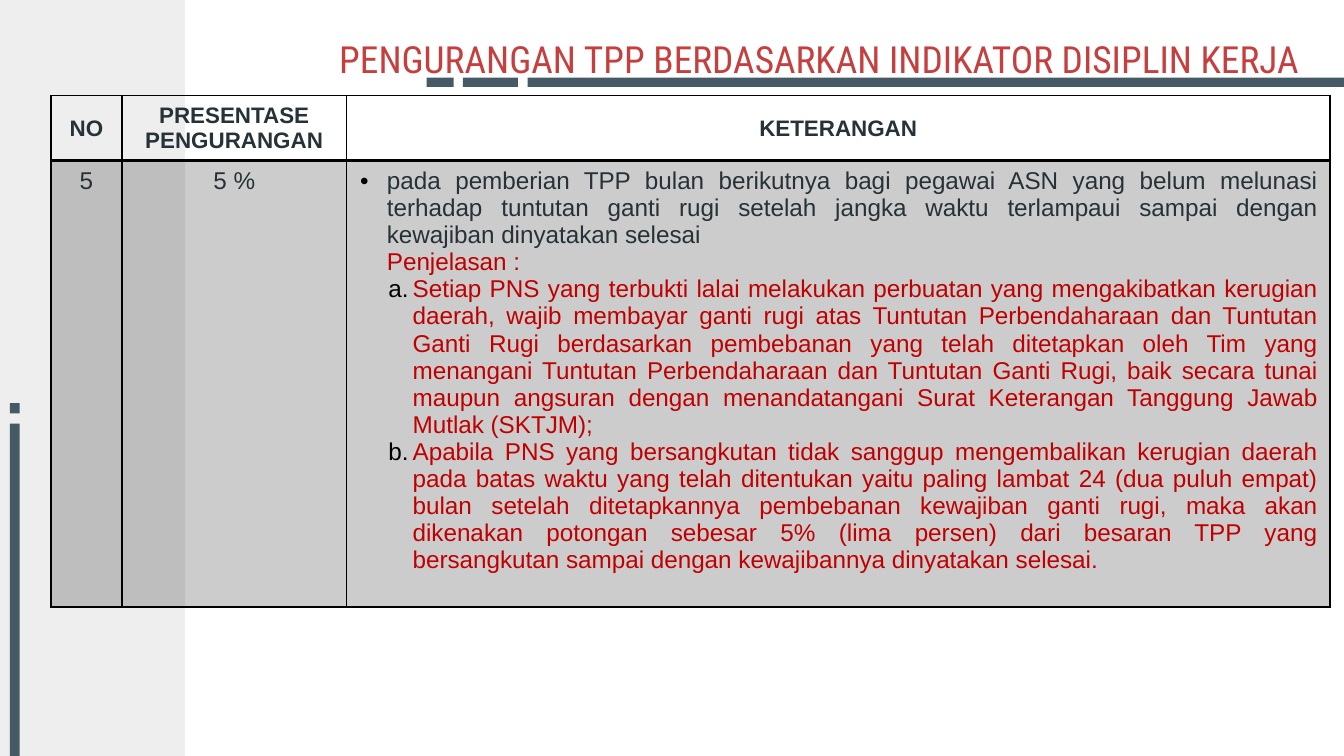
from lxml import etree
from pptx import Presentation
from pptx.dml.color import RGBColor
from pptx.enum.shapes import MSO_SHAPE as SHAPE
from pptx.enum.text import MSO_ANCHOR as ANCHOR, PP_ALIGN as ALIGN
from pptx.oxml.ns import qn
from pptx.util import Pt

INK, RED, SLATE, BLACK = "263238", "C00000", "455A64", "000000"
HEADERS = ["NO", "PRESENTASE\nPENGURANGAN", "KETERANGAN"]
DETAILS = [
    ("pada pemberian TPP bulan berikutnya bagi pegawai ASN yang belum melunasi "
     "terhadap tuntutan ganti rugi setelah jangka waktu terlampaui sampai dengan "
     "kewajiban dinyatakan selesai", INK, 14.4, -14.4, ("buChar", {"char": "•"})),
    ("Penjelasan :", RED, 14.4, 0, None),
    ("Setiap PNS yang terbukti lalai melakukan perbuatan yang mengakibatkan kerugian "
     "daerah, wajib membayar ganti rugi atas Tuntutan Perbendaharaan dan Tuntutan "
     "Ganti Rugi berdasarkan pembebanan yang telah ditetapkan oleh Tim yang "
     "menangani Tuntutan Perbendaharaan dan Tuntutan Ganti Rugi, baik secara tunai "
     "maupun angsuran dengan menandatangani Surat Keterangan Tanggung Jawab "
     "Mutlak (SKTJM);", RED, 28.2, -13, ("buAutoNum", {"type": "alphaLcPeriod"})),
    ("Apabila PNS yang bersangkutan tidak sanggup mengembalikan kerugian daerah "
     "pada batas waktu yang telah ditentukan yaitu paling lambat 24 (dua puluh empat) "
     "bulan setelah ditetapkannya pembebanan kewajiban ganti rugi, maka akan "
     "dikenakan potongan sebesar 5% (lima persen) dari besaran TPP yang "
     "bersangkutan sampai dengan kewajibannya dinyatakan selesai.",
     RED, 28.2, -13, ("buAutoNum", {"type": "alphaLcPeriod"})),
]


def rgb(color):
    return RGBColor.from_string(color)


def add_rect(s, x, y, w, h, color):
    sp = s.shapes.add_shape(SHAPE.RECTANGLE, Pt(x), Pt(y), Pt(w), Pt(h))
    sp.shadow.inherit = False
    sp.fill.solid()
    sp.fill.fore_color.rgb = rgb(color)
    sp.line.fill.background()


def format_text(p, font, size, color, bold=False):
    for r in p.runs:
        r.font.name, r.font.size, r.font.bold = font, Pt(size), bold
        r.font.color.rgb = rgb(color)


def add_decor(s, width, height):
    add_rect(s, 0, 0, 99, height, "EEEEEE")
    for left, right in ((228.6, 243), (248, 277.4), (282.6, width)):
        add_rect(s, left, 41.6, right - left, 5, SLATE)
    for top, bottom in ((216, 221.5), (227, height)):
        add_rect(s, 5.3, top, 5.3, bottom - top, SLATE)


def add_title(s, x, y, w, h):
    sp = s.shapes.title
    s.shapes._spTree.append(sp._element)
    sp.left, sp.top, sp.width, sp.height = Pt(x), Pt(y), Pt(w), Pt(h)
    tf = sp.text_frame
    tf.text = "PENGURANGAN TPP BERDASARKAN INDIKATOR DISIPLIN KERJA"
    tf.margin_left = tf.margin_right = tf.margin_top = tf.margin_bottom = Pt(7.2)
    tf.vertical_anchor = ANCHOR.BOTTOM
    tf.word_wrap = True
    p = tf.paragraphs[0]
    p.alignment, p.line_spacing = ALIGN.RIGHT, 1.5
    format_text(p, "Roboto Condensed", 20, "C53F3F")


def set_borders(cell, top, bottom):
    tcPr = cell._tc.get_or_add_tcPr()
    for side, width in (("L", 1), ("R", 1), ("T", top), ("B", bottom)):
        ln = etree.SubElement(tcPr, qn(f"a:ln{side}"), w=str(Pt(width)))
        fill = etree.SubElement(ln, qn("a:solidFill"))
        etree.SubElement(fill, qn("a:srgbClr"), val=BLACK)


def set_bullet(p, left, indent, bullet):
    pPr = p._p.get_or_add_pPr()
    pPr.set("marL", str(Pt(left)))
    pPr.set("indent", str(Pt(indent)))
    if bullet:
        tag, attrs = bullet
        color = etree.SubElement(pPr, qn("a:buClr"))
        etree.SubElement(color, qn("a:srgbClr"), val=BLACK)
        etree.SubElement(pPr, qn("a:buFont"), typeface="Arial")
        etree.SubElement(pPr, qn(f"a:{tag}"), attrs)


def fill_header(cell, text):
    set_borders(cell, 1, 2)
    cell.fill.background()
    cell.vertical_anchor = ANCHOR.MIDDLE
    cell.text_frame.text = text
    for p in cell.text_frame.paragraphs:
        p.alignment = ALIGN.CENTER
        format_text(p, "Arial", 12, INK, True)


def shade_body(cell):
    set_borders(cell, 2, 1)
    cell.fill.solid()
    cell.fill.fore_color.rgb = rgb(BLACK)
    color = cell._tc.tcPr.find(qn("a:solidFill")).find(qn("a:srgbClr"))
    etree.SubElement(color, qn("a:alpha"), val="20000")


def add_deduction_table(s, x, y, w, h):
    tbl = s.shapes.add_table(2, 3, Pt(x), Pt(y), Pt(w), Pt(h)).table
    tbl.first_row = tbl.horz_banding = False
    for col, width in zip(tbl.columns, (38, 120.4, w - 158.4)):
        col.width = Pt(width)
    for row, height in zip(tbl.rows, (35, h - 35)):
        row.height = Pt(height)
    for i, text in enumerate(HEADERS):
        fill_header(tbl.cell(0, i), text)
        shade_body(tbl.cell(1, i))
    for i, text in enumerate(("5", "5 %")):
        tf = tbl.cell(1, i).text_frame
        tf.text = text
        tf.paragraphs[0].alignment = ALIGN.CENTER
        format_text(tf.paragraphs[0], "Arial", 13, INK)
    tf = tbl.cell(1, 2).text_frame
    tf.text = "\n".join(detail[0] for detail in DETAILS)
    for p, (_, color, left, indent, bullet) in zip(tf.paragraphs, DETAILS):
        p.alignment = ALIGN.JUSTIFY
        set_bullet(p, left, indent, bullet)
        format_text(p, "Arial", 13, color)


def main():
    prs = Presentation()
    prs.slide_width, prs.slide_height = Pt(720), Pt(405)
    s = prs.slides.add_slide(prs.slide_layouts[5])
    add_decor(s, 720, 405)
    add_title(s, 162.7, 0, 540.7, 50.4)
    add_deduction_table(s, 27.3, 51.2, 685.2, 274)
    prs.save("out.pptx")


if __name__ == "__main__":
    main()
